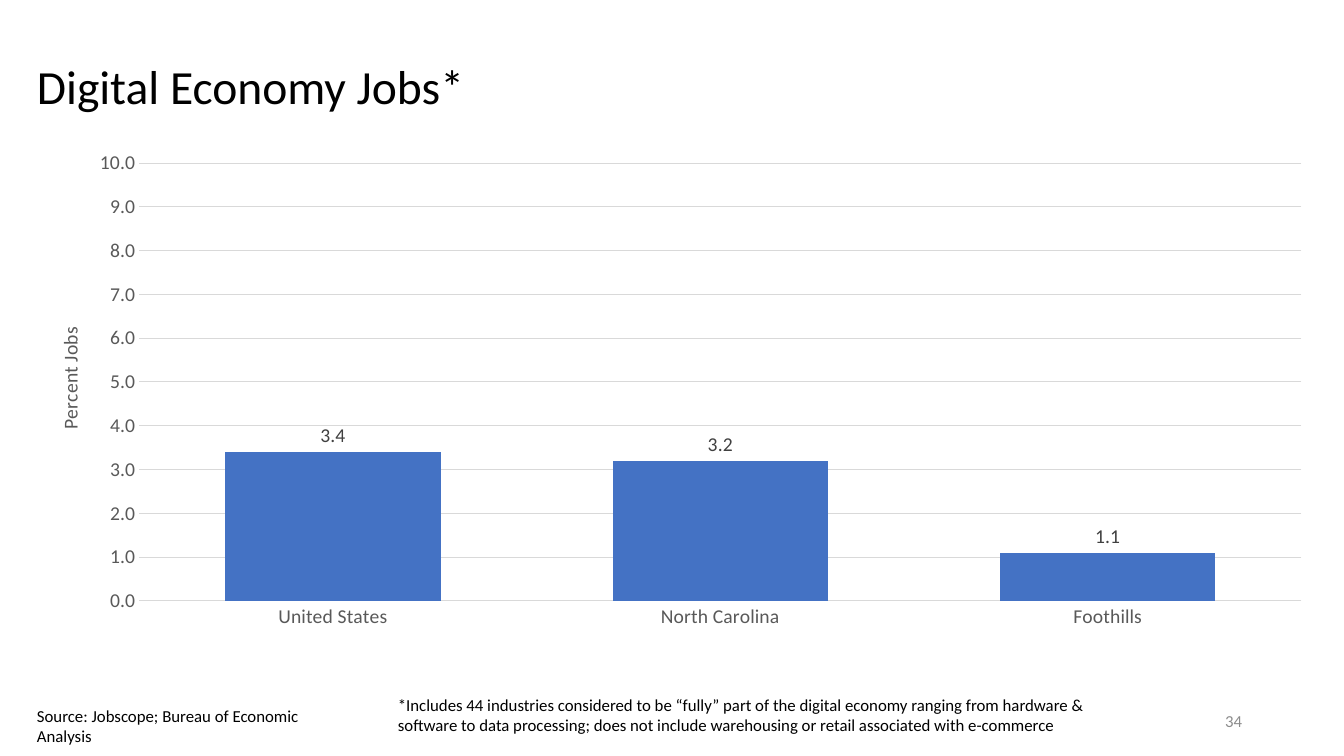
import pptx
import pptx.chart.data
import pptx.dml.color
import pptx.enum.chart
import pptx.enum.text
import pptx.oxml
import pptx.oxml.ns
import pptx.util

PIXELS_PER_INCH = 100.8
FONT = "Calibri"
COLORS = {
    "text": "000000",
    "axis": "595959",
    "label": "404040",
    "grid": "D9D9D9",
    "bar": "4472C4",
    "number": "8C8C8C",
}
JOB_SHARES = {"United States": 3.4, "North Carolina": 3.2, "Foothills": 1.1}


def px(length):
    return pptx.util.Emu(round(length * 914400 / PIXELS_PER_INCH))


def rgb(name):
    return pptx.dml.color.RGBColor.from_string(COLORS[name])


def set_font(font, size, color):
    font.name = FONT
    font.size = pptx.util.Pt(size)
    font.bold = False
    font.color.rgb = rgb(color)


def set_line(line, color):
    line.color.rgb = rgb(color)
    line.width = pptx.util.Pt(0.75)


def add_text(slide, box, text, size, color="text",
             anchor=pptx.enum.text.MSO_ANCHOR.TOP,
             alignment=pptx.enum.text.PP_ALIGN.LEFT, spacing=1.0):
    shape = slide.shapes.add_textbox(*map(px, box))
    frame = shape.text_frame
    frame.word_wrap = True
    frame.vertical_anchor = anchor
    paragraph = frame.paragraphs[0]
    paragraph.text = text
    paragraph.alignment = alignment
    paragraph.line_spacing = spacing
    set_font(paragraph.font, size, color)


def set_layout(element, index, **values):
    for layout in element.findall(pptx.oxml.ns.qn("c:layout")):
        element.remove(layout)
    modes = '<c:xMode val="edge"/><c:yMode val="edge"/>'
    target = '<c:layoutTarget val="inner"/>' if "w" in values else ""
    sizes = "".join(f'<c:{key} val="{value}"/>' for key, value in values.items())
    element.insert(index, pptx.oxml.parse_xml(
        f'<c:layout {pptx.oxml.ns.nsdecls("c")}><c:manualLayout>'
        f"{target}{modes}{sizes}</c:manualLayout></c:layout>"))


def style_axes(chart):
    category_axis, value_axis = chart.category_axis, chart.value_axis
    for axis in (category_axis, value_axis):
        axis.major_tick_mark = pptx.enum.chart.XL_TICK_MARK.NONE
        axis.minor_tick_mark = pptx.enum.chart.XL_TICK_MARK.NONE
        set_font(axis.tick_labels.font, 14, "axis")
    set_line(category_axis.format.line, "grid")
    value_axis.format.line.fill.background()
    value_axis.minimum_scale, value_axis.maximum_scale = 0, 10
    value_axis.major_unit = 1
    value_axis.tick_labels.number_format = "0.0"
    value_axis.tick_labels.number_format_is_linked = False
    set_line(value_axis.major_gridlines.format.line, "grid")
    paragraph = value_axis.axis_title.text_frame.paragraphs[0]
    paragraph.text = "Percent Jobs"
    set_font(paragraph.font, 14, "axis")


def add_jobs_chart(slide, box):
    data = pptx.chart.data.CategoryChartData(number_format="0.0")
    data.categories = list(JOB_SHARES)
    data.add_series("Series 1", list(JOB_SHARES.values()))
    chart = slide.shapes.add_chart(
        pptx.enum.chart.XL_CHART_TYPE.COLUMN_CLUSTERED, *map(px, box), data).chart
    chart.has_legend = False
    chart.has_title = False
    set_font(chart.font, 14, "text")
    style_axes(chart)

    plot = chart.plots[0]
    plot.gap_width = 80
    plot.vary_by_categories = False
    series = plot.series[0]
    series.format.fill.solid()
    series.format.fill.fore_color.rgb = rgb("bar")
    labels = series.data_labels
    labels.show_value = True
    labels.number_format = "0.0"
    labels.number_format_is_linked = False
    labels.position = pptx.enum.chart.XL_LABEL_POSITION.OUTSIDE_END
    set_font(labels.font, 14, "label")

    chart_space = chart.element
    set_layout(chart_space.xpath(".//c:plotArea")[0], 0, x=0.087, y=0.035, w=0.901, h=0.805)
    set_layout(chart_space.xpath(".//c:valAx/c:title")[0], 1, x=0.02, y=0.33)


def add_footer(slide, box):
    left, top, width, height = box
    add_text(slide, (left, top + 11, 340, 30),
             "Source: Jobscope; Bureau of Economic Analysis", 12)
    add_text(slide, (left + 361, top, 713, height),
             "*Includes 44 industries considered to be “fully” part of the digital economy "
             "ranging from hardware & software to data processing; does not include "
             "warehousing or retail associated with e-commerce", 12)
    add_text(slide, (left + width - 302, top + 11, 302, 40), "34", 12, "number",
             pptx.enum.text.MSO_ANCHOR.MIDDLE, pptx.enum.text.PP_ALIGN.RIGHT)


def build_jobs_slide(presentation):
    slide = presentation.slides.add_slide(presentation.slide_layouts[6])
    add_text(slide, (27, 34, 1286, 110), "Digital Economy Jobs*", 34,
             anchor=pptx.enum.text.MSO_ANCHOR.MIDDLE, spacing=0.9)
    add_jobs_chart(slide, (27, 144, 1290, 544))
    add_footer(slide, (27, 690, 1225, 50))


def main():
    presentation = pptx.Presentation()
    presentation.slide_width, presentation.slide_height = px(1344), px(756)
    build_jobs_slide(presentation)
    presentation.save("out.pptx")


if __name__ == "__main__":
    main()
